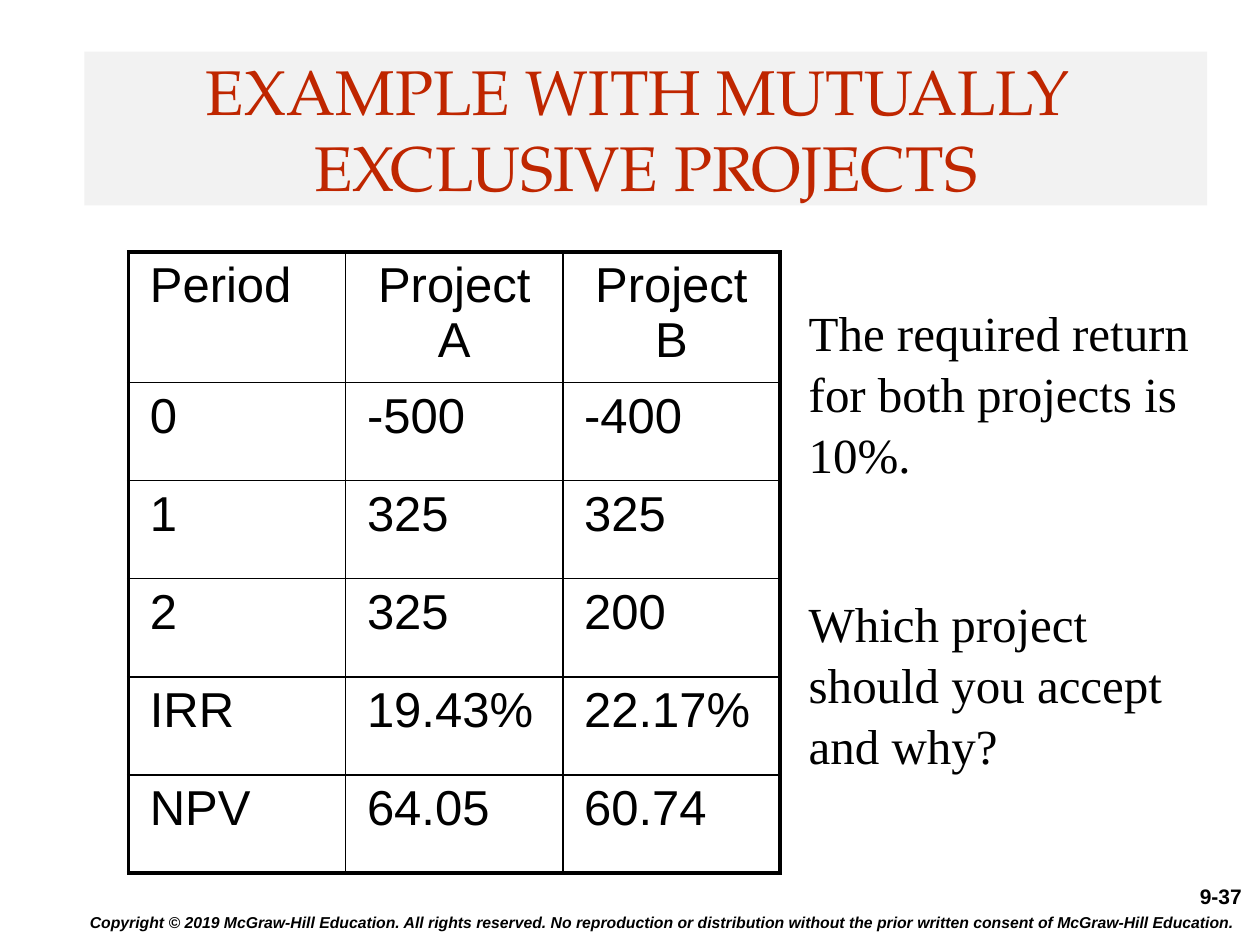
from collections import namedtuple

from lxml.etree import SubElement
from pptx import Presentation
from pptx.dml.color import RGBColor
from pptx.enum.shapes import MSO_SHAPE
from pptx.enum.text import MSO_ANCHOR, PP_ALIGN
from pptx.oxml.ns import qn
from pptx.util import Inches, Pt

BLACK = RGBColor(0, 0, 0)
WHITE = RGBColor(255, 255, 255)
PALE_GREY = RGBColor(0xF2, 0xF2, 0xF2)
BRICK_RED = RGBColor(0xBF, 0x26, 0x00)

UNIT = Inches(0.1)
COLUMNS, ROWS = 100, 75
OUTER_LINE, INNER_LINE = Pt(2.25), Pt(1)
HEADER_SHARE, BODY_SHARE = 0.21, 0.158

Box = namedtuple("Box", "left top width height")

PERIODS = [
    ("Period", "Project A", "Project B"),
    ("0", "-500", "-400"),
    ("1", "325", "325"),
    ("2", "325", "200"),
    ("IRR", "19.43%", "22.17%"),
    ("NPV", "64.05", "60.74"),
]


def grid_box(left, top, width, height):
    """Turn grid columns and rows into a box of slide lengths."""
    return Box(*(round(share * UNIT) for share in (left, top, width, height)))


def write(frame, *texts, font="Arial", size=28, color=BLACK, bold=False, italic=False,
          align=PP_ALIGN.LEFT, anchor=MSO_ANCHOR.TOP, spacing=None, gap=0):
    """Fill a text frame with one formatted paragraph for each text."""
    frame.word_wrap = True
    frame.vertical_anchor = anchor
    for index, text in enumerate(texts):
        para = frame.add_paragraph() if index else frame.paragraphs[0]
        para.text = text
        para.alignment = align
        para.line_spacing = spacing
        para.space_before = Pt(gap if index else 0)
        para.font.name = font
        para.font.size = Pt(size)
        para.font.bold = bold
        para.font.italic = italic
        para.font.color.rgb = color


def add_title(page, box):
    """Place the heading on its grey panel."""
    panel = page.shapes.add_shape(MSO_SHAPE.RECTANGLE, *box)
    panel.shadow.inherit = False
    panel.fill.solid()
    panel.fill.fore_color.rgb = PALE_GREY
    panel.line.fill.background()
    write(panel.text_frame, "EXAMPLE WITH MUTUALLY \vEXCLUSIVE PROJECTS",
          font="TeX Gyre Pagella", size=36, color=BRICK_RED,
          align=PP_ALIGN.CENTER, anchor=MSO_ANCHOR.MIDDLE)


def set_borders(cell, widths):
    """Draw the four black borders of a cell in the given widths."""
    properties = cell._tc.get_or_add_tcPr()
    for index, (side, width) in enumerate(widths.items()):
        line = SubElement(properties, qn(f"a:ln{side}"), w=str(int(width)))
        fill = SubElement(line, qn("a:solidFill"))
        SubElement(fill, qn("a:srgbClr"), val=str(BLACK))
        properties.insert(index, line)


def add_project_table(page, box):
    """Place the table of cash flows, IRR and NPV."""
    row_count, column_count = len(PERIODS), len(PERIODS[0])
    table = page.shapes.add_table(row_count, column_count, *box).table
    table.first_row = table.horz_banding = False
    for column in table.columns:
        column.width = box.width // column_count
    for index, row in enumerate(table.rows):
        row.height = round(box.height * (BODY_SHARE if index else HEADER_SHARE))
    for row, texts in enumerate(PERIODS):
        for column, text in enumerate(texts):
            cell = table.cell(row, column)
            cell.margin_left = cell.margin_right = Inches(0.17)
            cell.margin_top = cell.margin_bottom = Inches(0.05)
            cell.fill.solid()
            cell.fill.fore_color.rgb = WHITE
            centred = row == 0 and column > 0
            write(cell.text_frame, text,
                  align=PP_ALIGN.CENTER if centred else PP_ALIGN.LEFT)
            on_edge = {"L": column == 0, "R": column == column_count - 1,
                       "T": row == 0, "B": row == row_count - 1}
            set_borders(cell, {side: OUTER_LINE if edge else INNER_LINE
                               for side, edge in on_edge.items()})


def add_questions(page, box):
    """Place the required return and the question beside the table."""
    write(page.shapes.add_textbox(*box).text_frame,
          "The required return for both projects is 10%.",
          "Which project should you accept and why?",
          font="Times New Roman", spacing=1.04, gap=61.4)


def add_page_number(page, box):
    """Place the page number at the right edge."""
    write(page.shapes.add_textbox(*box).text_frame, "9-37 ",
          size=12, bold=True, align=PP_ALIGN.RIGHT)


def add_copyright(page, box):
    """Place the copyright line along the bottom."""
    frame = page.shapes.add_textbox(*box).text_frame
    frame.margin_left = frame.margin_right = Inches(0.09)
    frame.margin_top = frame.margin_bottom = Inches(0.04)
    write(frame, "Copyright © 2019 McGraw-Hill Education. All rights reserved. "
          "No reproduction or distribution without the prior written consent "
          "of McGraw-Hill Education.",
          size=9, bold=True, italic=True,
          align=PP_ALIGN.CENTER, anchor=MSO_ANCHOR.MIDDLE)


def main():
    """Build the slide and save the deck."""
    deck = Presentation()
    deck.slide_width, deck.slide_height = COLUMNS * UNIT, ROWS * UNIT
    page = deck.slides.add_slide(deck.slide_layouts[6])
    add_title(page, grid_box(6.7, 4.1, 89.1, 12.2))
    add_project_table(page, grid_box(10.2, 20, 51.7, 49.3))
    add_questions(page, grid_box(63.2, 23.3, 32.5, 38.4))
    add_page_number(page, grid_box(89.1, 69.6, 10.9, 2.6))
    add_copyright(page, grid_box(5, 71.4, 95, 3.6))
    deck.save("out.pptx")


if __name__ == "__main__":
    main()
